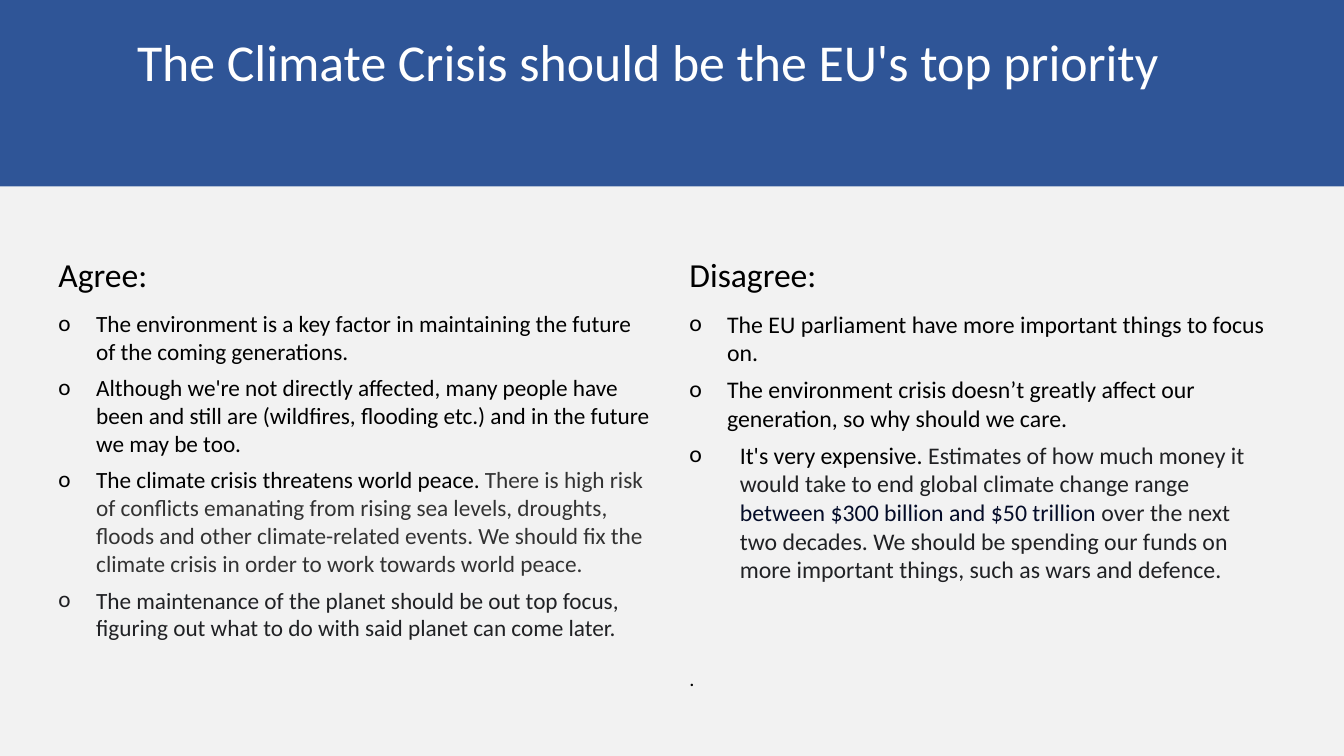
from lxml import etree
from pptx import Presentation
from pptx.dml.color import RGBColor
from pptx.enum.shapes import MSO_SHAPE
from pptx.enum.text import MSO_ANCHOR, MSO_AUTO_SIZE, PP_ALIGN
from pptx.oxml.ns import qn
from pptx.util import Cm, Pt

RECTANGLE = MSO_SHAPE.RECTANGLE
TOP = MSO_ANCHOR.TOP
NO_AUTOFIT = MSO_AUTO_SIZE.NONE
LEFT = PP_ALIGN.LEFT

BLUE = RGBColor(0x2F, 0x55, 0x97)
PALE = RGBColor(0xF2, 0xF2, 0xF2)
WHITE = RGBColor(0xFF, 0xFF, 0xFF)
BLACK = RGBColor(0x00, 0x00, 0x00)
GREY = RGBColor(0x33, 0x33, 0x33)
CHARCOAL = RGBColor(0x20, 0x21, 0x24)
NAVY = RGBColor(0x04, 0x0C, 0x28)

FONT = "Calibri"
WIDTH, HEIGHT = 33.87, 19.05
BAND_HEIGHT = 4.7
HEADING_HEIGHT = 1.4
INDENT, WIDE_INDENT = 0.95, 1.27

TITLE = "The Climate Crisis should be the EU's top priority"
AGREE = [
    (INDENT, [("The environment is a key factor in maintaining the future of the coming generations.", BLACK)]),
    (INDENT, [("Although we're not directly affected, many people have been and still are "
               "(wildfires, flooding etc.) and in the future we may be too.", BLACK)]),
    (INDENT, [("The climate crisis threatens world peace. ", BLACK),
              ("There is high risk of conflicts emanating from rising sea levels, droughts, floods "
               "and other climate-related events. We should fix the climate crisis in order to "
               "work towards world peace.", GREY)]),
    (INDENT, [("The maintenance of the planet should be out top focus, figuring out what to do "
               "with said planet can come later.", CHARCOAL)]),
]
DISAGREE = [
    (INDENT, [("The EU parliament have more important things to focus on.", BLACK)]),
    (INDENT, [("The environment crisis doesn’t greatly affect our generation, so why should we care.", BLACK)]),
    (WIDE_INDENT, [("It's very expensive. ", BLACK),
                   ("Estimates of how much money it would take to end global climate change range ", CHARCOAL),
                   ("between $300 billion and $50 trillion", NAVY),
                   (" over the next two decades. We should be spending our funds on more important "
                    "things, such as wars and defence.", CHARCOAL)]),
]


def set_attrs(obj, values):
    for name, value in values.items():
        setattr(obj, name, value)


def place(sp, box):
    set_attrs(sp, dict(zip(("left", "top", "width", "height"), map(Cm, box))))


def add_panel(s, box, color):
    sp = s.shapes.add_shape(RECTANGLE, *map(Cm, box))
    sp.shadow.inherit = False
    sp.fill.solid()
    sp.fill.fore_color.rgb = color
    sp.line.fill.background()
    s.shapes.element.insert(2, sp.element)


def prepare(sp, box):
    place(sp, box)
    tf = sp.text_frame
    set_attrs(tf, {"word_wrap": True, "auto_size": NO_AUTOFIT, "vertical_anchor": TOP})
    return tf


def add_text(p, runs, size, space_before=0, space_after=6, line_spacing=1.0):
    set_attrs(p, {"alignment": LEFT, "space_before": Pt(space_before),
                  "space_after": Pt(space_after), "line_spacing": line_spacing})
    for text, color in runs:
        r = p.add_run()
        r.text = text
        set_attrs(r.font, {"name": FONT, "size": Pt(size), "bold": False})
        r.font.color.rgb = color


def set_bullet(p, indent=0):
    pPr = p._p.get_or_add_pPr()
    pPr.set("marL", str(Cm(indent)))
    pPr.set("indent", str(-Cm(indent)))
    if indent:
        etree.SubElement(pPr, qn("a:buFont"), typeface=FONT)
        etree.SubElement(pPr, qn("a:buChar"), char="o")
    else:
        etree.SubElement(pPr, qn("a:buNone"))


def add_header(s, box):
    left, top, width, height = box
    add_panel(s, box, BLUE)
    tf = prepare(s.shapes.title, (left + 3.2, top + 0.79, width - 6.41, 2.49))
    add_text(tf.paragraphs[0], [(TITLE, WHITE)], 37, space_after=0, line_spacing=0.9)


def add_column(heading_sp, body_sp, box, heading, items, size):
    left, top, width, height = box
    tf = prepare(heading_sp, (left, top, width, HEADING_HEIGHT))
    add_text(tf.paragraphs[0], [(heading, BLACK)], 24)
    tf = prepare(body_sp, (left, top + HEADING_HEIGHT, width, height - HEADING_HEIGHT))
    for i, (indent, runs) in enumerate(items):
        p = tf.add_paragraph() if i else tf.paragraphs[0]
        add_text(p, runs, size)
        set_bullet(p, indent)
    return tf


def add_debate(s, box):
    left, top, width, height = box
    add_panel(s, box, PALE)
    heading_agree, body_agree, heading_disagree, body_disagree = list(s.placeholders)[1:5]
    column_top, column_height = top + 1.57, 10.87
    add_column(heading_agree, body_agree, (left + 1.22, column_top, 15.47, column_height),
               "Agree:", AGREE, 16.6)
    tf = add_column(heading_disagree, body_disagree,
                    (left + 17.12, column_top, 15.09, column_height),
                    "Disagree:", DISAGREE, 17)
    p = tf.add_paragraph()
    add_text(p, [(".", BLACK)], 14.6, space_before=53)
    set_bullet(p)


def main():
    prs = Presentation()
    set_attrs(prs, {"slide_width": Cm(WIDTH), "slide_height": Cm(HEIGHT)})
    s = prs.slides.add_slide(prs.slide_layouts.get_by_name("Comparison"))
    add_header(s, (0, 0, WIDTH, BAND_HEIGHT))
    add_debate(s, (0, BAND_HEIGHT, WIDTH, HEIGHT - BAND_HEIGHT))
    prs.save("out.pptx")


if __name__ == "__main__":
    main()
